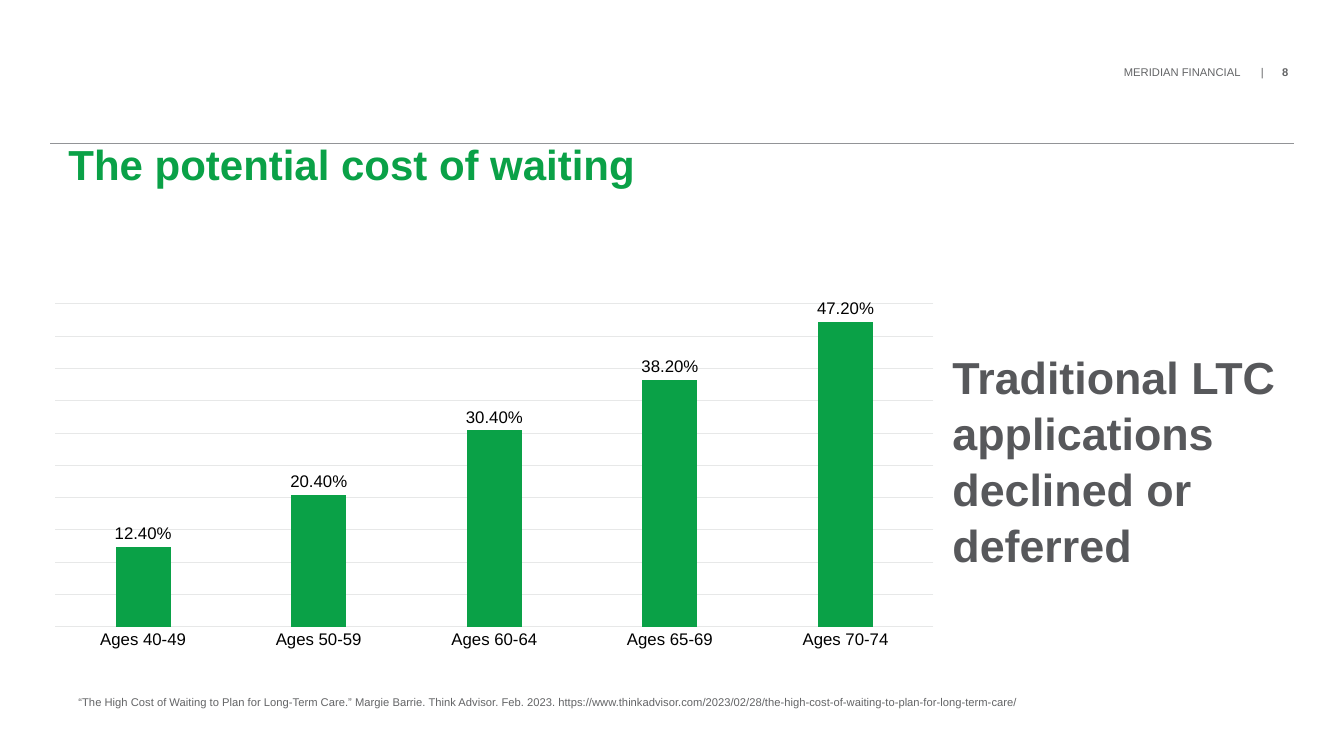
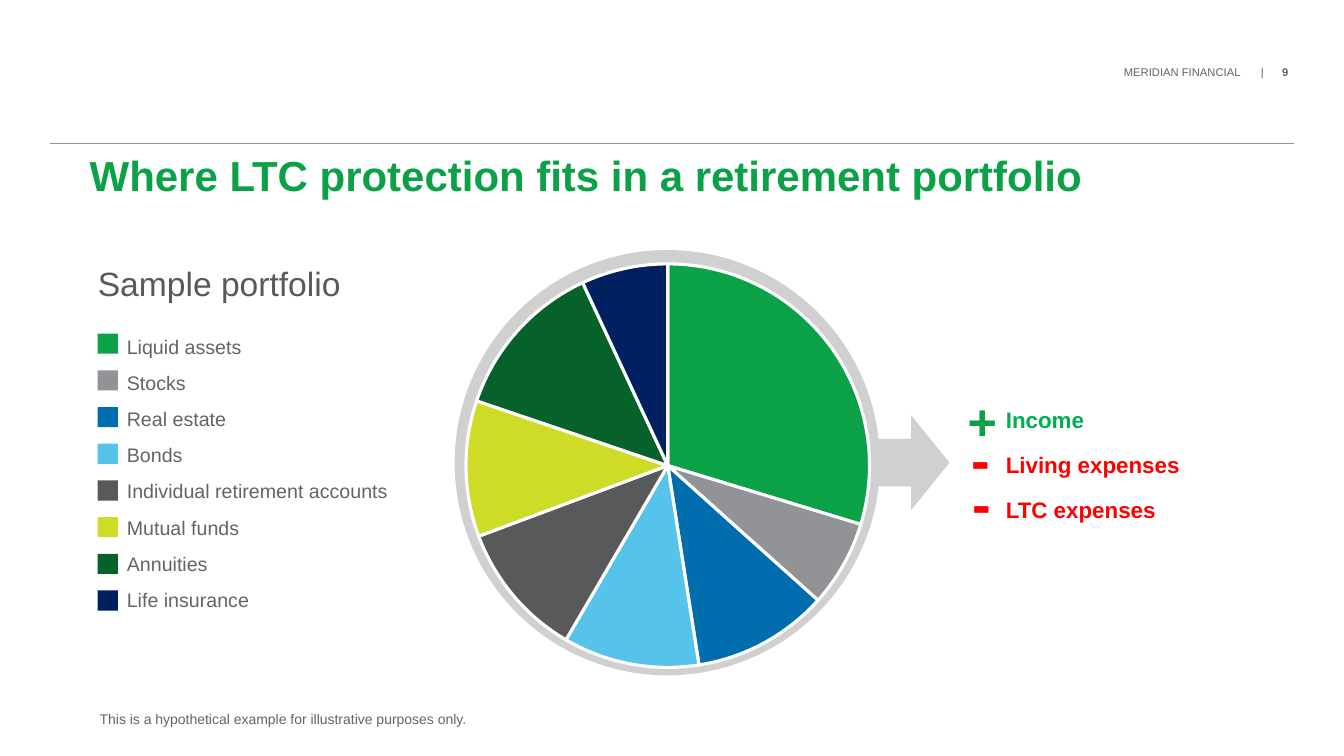
from dataclasses import dataclass

from lxml.etree import SubElement
from pptx import Presentation
from pptx.chart.chart import Chart
from pptx.chart.data import CategoryChartData
from pptx.dml.color import RGBColor
from pptx.enum.chart import XL_CHART_TYPE, XL_LABEL_POSITION, XL_TICK_MARK
from pptx.enum.shapes import MSO_CONNECTOR, MSO_SHAPE
from pptx.oxml import parse_xml
from pptx.oxml.ns import nsdecls, qn
from pptx.shapes.autoshape import Shape
from pptx.slide import Slide
from pptx.util import Emu, Inches, Pt

CELL = 0.1  # inches per grid cell; the slide is 133.33 columns by 75 rows


@dataclass(frozen=True)
class Theme:
    font: str = "Arial"
    green: str = "0AA147"
    income_green: str = "00B050"
    red: str = "FF0000"
    text: str = "636466"
    statement: str = "57585B"
    subtitle: str = "58595B"
    rule: str = "929497"
    gridline: str = "E7E8E8"
    ring: str = "D0D0D0"
    white: str = "FFFFFF"
    black: str = "000000"
    title_size: float = 30
    statement_size: float = 32
    plus_size: float = 36
    minus_size: float = 40
    subtitle_size: float = 24
    flow_size: float = 16
    legend_size: float = 14
    axis_size: float = 12
    note_size: float = 10
    small_size: float = 8
    leading: float = 1.04


THEME = Theme()


@dataclass(frozen=True)
class Box:
    """A place on the grid, in cells."""
    col: float
    row: float
    cols: float
    rows: float

    def emu(self) -> tuple[Emu, Emu, Emu, Emu]:
        return cells(self.col), cells(self.row), cells(self.cols), cells(self.rows)


@dataclass(frozen=True)
class Run:
    text: str
    color: str | None = None
    bold: bool | None = None


@dataclass(frozen=True)
class Holding:
    name: str
    share: int
    color: str


@dataclass(frozen=True)
class Sign:
    mark: str
    box: Box
    size: float
    color: str


DECLINE_RATES = {
    "Ages 40-49": 0.124,
    "Ages 50-59": 0.204,
    "Ages 60-64": 0.304,
    "Ages 65-69": 0.382,
    "Ages 70-74": 0.472,
}

HOLDINGS = (
    Holding("Liquid assets", 30, THEME.green),
    Holding("Stocks", 7, "929397"),
    Holding("Real estate", 11, "006DAF"),
    Holding("Bonds", 11, "56C3EA"),
    Holding("Individual retirement accounts", 11, "58595B"),
    Holding("Mutual funds", 11, "CEDC27"),
    Holding("Annuities", 13, "06612B"),
    Holding("Life insurance", 7, "002060"),
)

CASH_FLOWS = (
    Run("Income", THEME.income_green),
    Run("Living expenses", THEME.red),
    Run("LTC expenses", THEME.red),
)

SIGNS = (
    Sign("+", Box(95, 38, 5, 7.1), THEME.plus_size, THEME.green),
    Sign("-", Box(95.4, 41.4, 4.4, 7.7), THEME.minus_size, THEME.red),
    Sign("-", Box(95.5, 45.7, 4.4, 7.7), THEME.minus_size, THEME.red),
)


def cells(count: float) -> Emu:
    return Inches(count * CELL)


def rgb(color: str) -> RGBColor:
    return RGBColor.from_string(color)


def add_text(slide: Slide, box: Box, *paragraphs: str | tuple[Run, ...],
             size: float, color: str = THEME.text, bold: bool = False,
             inset: bool = True, leading: float = THEME.leading,
             exact_leading: float | None = None, after: float = 0,
             tabs: tuple[float, ...] = ()) -> None:
    """Leading is a share of the line, exact_leading is in points, tabs in cells."""
    frame = slide.shapes.add_textbox(*box.emu()).text_frame
    frame.word_wrap = True
    if not inset:
        frame.margin_left = frame.margin_right = 0
        frame.margin_top = frame.margin_bottom = 0
    for index, content in enumerate(paragraphs):
        paragraph = frame.paragraphs[0] if index == 0 else frame.add_paragraph()
        paragraph.line_spacing = Pt(exact_leading) if exact_leading else leading
        paragraph.space_after = Pt(after)
        if tabs:
            stops = SubElement(paragraph._p.get_or_add_pPr(), qn("a:tabLst"))
            for stop in tabs:
                SubElement(stops, qn("a:tab"), pos=str(int(cells(stop))), algn="l")
        for part in (Run(content),) if isinstance(content, str) else content:
            run = paragraph.add_run()
            run.text = part.text
            run.font.name = THEME.font
            run.font.size = Pt(size)
            run.font.bold = bold if part.bold is None else part.bold
            run.font.color.rgb = rgb(part.color or color)


def add_figure(slide: Slide, kind: MSO_SHAPE, box: Box, fill: str | None = None,
               line: str | None = None, width: float = 0) -> Shape:
    figure = slide.shapes.add_shape(kind, *box.emu())
    figure.shadow.inherit = False
    if fill:
        figure.fill.solid()
        figure.fill.fore_color.rgb = rgb(fill)
    else:
        figure.fill.background()
    if line:
        figure.line.color.rgb = rgb(line)
        figure.line.width = Pt(width)
    else:
        figure.line.fill.background()
    return figure


def add_plain_chart(slide: Slide, kind: XL_CHART_TYPE, box: Box,
                    values: dict[str, float], plot: Box) -> Chart:
    """Add a one-series chart; plot is the inner plot area in shares of the chart."""
    data = CategoryChartData()
    data.categories = list(values)
    data.add_series("Series 1", list(values.values()))
    chart = slide.shapes.add_chart(kind, *box.emu(), data).chart
    chart.has_title = False
    chart.has_legend = False
    chart.font.name = THEME.font
    chart.font.size = Pt(THEME.note_size)
    chart.font.color.rgb = rgb(THEME.text)

    plot_area = chart._chartSpace.chart.plotArea
    for old_layout in plot_area.findall(qn("c:layout")):
        plot_area.remove(old_layout)
    plot_area.insert(0, parse_xml(
        f'<c:layout {nsdecls("c")}><c:manualLayout>'
        '<c:layoutTarget val="inner"/><c:xMode val="edge"/><c:yMode val="edge"/>'
        f'<c:x val="{plot.col}"/><c:y val="{plot.row}"/>'
        f'<c:w val="{plot.cols}"/><c:h val="{plot.rows}"/>'
        '</c:manualLayout></c:layout>'))
    return chart


def add_page(deck: Presentation, number: int, title: str, title_box: Box) -> Slide:
    """Add a slide with the running header, the rule and the title."""
    slide = deck.slides.add_slide(deck.slide_layouts[6])
    add_text(slide, Box(111.5, 6.5, 17, 1.5),
             (Run("MERIDIAN FINANCIAL\t|\t"), Run(str(number), bold=True)),
             size=THEME.small_size, inset=False, leading=1, tabs=(13.6, 15.7))
    rule = slide.shapes.add_connector(MSO_CONNECTOR.STRAIGHT, cells(5), cells(14.2),
                                      cells(128.4), cells(14.2))
    rule.line.color.rgb = rgb(THEME.rule)
    rule.line.width = Pt(0.5)
    SubElement(rule._element.spPr, qn("a:effectLst"))
    add_text(slide, title_box, title, size=THEME.title_size, color=THEME.green,
             bold=True, inset=False, exact_leading=31)
    return slide


def build_cost_of_waiting(deck: Presentation) -> None:
    slide = add_page(deck, 8, "The potential cost of waiting",
                     Box(6.8, 14.4, 119.4, 7.3))
    chart = add_plain_chart(slide, XL_CHART_TYPE.COLUMN_CLUSTERED,
                            Box(3.7, 21.7, 89.8, 44.5), DECLINE_RATES,
                            Box(0.02, 0.19, 0.97, 0.72))
    ages, rates = chart.category_axis, chart.value_axis
    ages.major_tick_mark = XL_TICK_MARK.NONE
    ages.tick_labels.font.size = Pt(THEME.axis_size)
    ages.tick_labels.font.color.rgb = rgb(THEME.black)
    rates.visible = False
    rates.minimum_scale, rates.maximum_scale, rates.major_unit = 0, 0.5, 0.05
    rates.has_major_gridlines = True
    for line in (ages.format.line, rates.major_gridlines.format.line):
        line.color.rgb = rgb(THEME.gridline)
        line.width = Pt(0.75)

    columns = chart.plots[0]
    columns.vary_by_categories = False
    columns.gap_width, columns.overlap = 219, -27
    fill = columns.series[0].format.fill
    fill.solid()
    fill.fore_color.rgb = rgb(THEME.green)
    columns.has_data_labels = True
    labels = columns.data_labels
    labels.show_value = True
    labels.number_format, labels.number_format_is_linked = "0.00%", False
    labels.position = XL_LABEL_POSITION.OUTSIDE_END
    labels.font.size = Pt(THEME.axis_size)
    labels.font.color.rgb = rgb(THEME.black)

    add_text(slide, Box(93.5, 34, 36.1, 22.6),
             "Traditional LTC applications declined or deferred",
             size=THEME.statement_size, color=THEME.statement, bold=True)
    add_text(slide, Box(6.8, 66.2, 119.4, 4.1),
             "“The High Cost of Waiting to Plan for Long-Term Care.” Margie Barrie. "
             "Think Advisor. Feb. 2023. https://www.thinkadvisor.com/2023/02/28/"
             "the-high-cost-of-waiting-to-plan-for-long-term-care/",
             size=THEME.small_size, exact_leading=26)


def build_portfolio(deck: Presentation) -> None:
    slide = add_page(deck, 9, "Where LTC protection fits in a retirement portfolio",
                     Box(8.9, 15.5, 113.3, 4.7))
    add_text(slide, Box(9.7, 25.9, 37.1, 4), "Sample portfolio",
             size=THEME.subtitle_size, color=THEME.subtitle, inset=False)
    add_figure(slide, MSO_SHAPE.OVAL, Box(45.8, 25.5, 40.8, 40.8),
               line=THEME.ring, width=10)
    add_figure(slide, MSO_SHAPE.RIGHT_ARROW, Box(86.6, 41.2, 7.6, 9.4), fill=THEME.ring)

    chart = add_plain_chart(slide, XL_CHART_TYPE.PIE, Box(31.3, 24.9, 69.9, 42.6),
                            {str(rank): holding.share
                             for rank, holding in enumerate(HOLDINGS, 1)},
                            Box(0.21, 0.03, 0.58, 0.94))
    pie = chart.plots[0]
    pie.vary_by_categories = False
    for index, holding in enumerate(HOLDINGS):
        piece = pie.series[0].points[index].format
        piece.fill.solid()
        piece.fill.fore_color.rgb = rgb(holding.color)
        piece.line.color.rgb = rgb(THEME.white)
        piece.line.width = Pt(2.25)
        add_figure(slide, MSO_SHAPE.RECTANGLE, Box(9.7, 33.1 + 3.64 * index, 2, 2),
                   fill=holding.color)
    add_text(slide, Box(11.6, 32.3, 38.1, 29.1), *(holding.name for holding in HOLDINGS),
             size=THEME.legend_size, exact_leading=19.8, after=6)

    add_text(slide, Box(98.8, 39.7, 25.2, 21.2), *((flow,) for flow in CASH_FLOWS),
             size=THEME.flow_size, bold=True, after=12)
    for sign in SIGNS:
        add_text(slide, sign.box, sign.mark, size=sign.size, color=sign.color, bold=True)
    add_text(slide, Box(8.9, 69.9, 109.8, 2.7),
             "This is a hypothetical example for illustrative purposes only.",
             size=THEME.note_size)


def main() -> None:
    deck = Presentation()
    deck.slide_width, deck.slide_height = cells(133.33), cells(75)
    build_cost_of_waiting(deck)
    build_portfolio(deck)
    deck.save("out.pptx")


if __name__ == "__main__":
    main()
